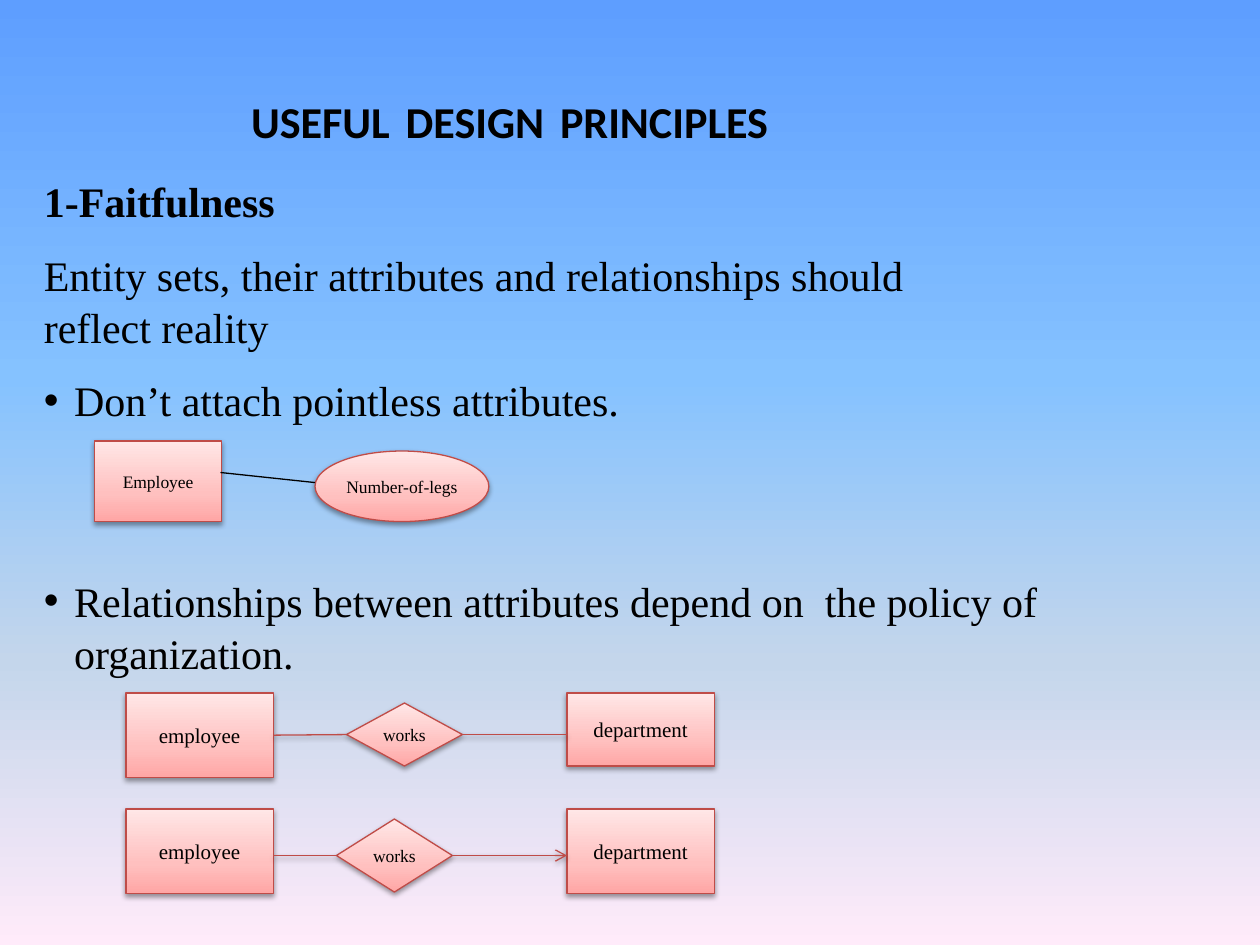
import dataclasses
from typing import Any, Optional

import pptx
import pptx.dml.color
import pptx.enum.shapes
import pptx.enum.text
import pptx.oxml
import pptx.oxml.ns
import pptx.util

Inches = pptx.util.Inches
Kind = pptx.enum.shapes.MSO_SHAPE
Align = pptx.enum.text.PP_ALIGN
Anchor = pptx.enum.text.MSO_ANCHOR
NS = pptx.oxml.ns.nsdecls("a")
TOP, LEFT, LOW, RIGHT = range(4)


@dataclasses.dataclass(frozen=True)
class Theme:
    ink: str = "000000"
    edge: str = "BF4C48"
    sky: tuple = ((0, "5E9EFF"), (40, "85C2FF"), (70, "C4D6EB"), (100, "FFEBFA"))
    rose: tuple = ((0, "FFA6A5"), (35, "FFC0BF"), (100, "FFE7E7"))
    head: str = "Calibri"
    body: str = "Times New Roman"
    title: float = 25.2
    gap: float = 39.6
    text: float = 24
    label: float = 12
    small: float = 10
    line: float = 0.75


THEME = Theme()


@dataclasses.dataclass(frozen=True)
class Node:
    name: str
    text: str
    kind: Any
    box: tuple[float, float, float, float]
    size: float = THEME.label


@dataclasses.dataclass(frozen=True)
class Wire:
    start: tuple[float, float]
    end: tuple[float, float]
    tail: Optional[tuple[str, int]] = None  # node and side joined at the start
    tip: Optional[tuple[str, int]] = None  # node and side joined at the end
    color: str = THEME.edge
    shade: bool = True
    arrow: bool = False


@dataclasses.dataclass(frozen=True)
class Para:
    text: str
    bold: bool = False
    bullet: bool = False


def rgb(code: str) -> Any:
    return pptx.dml.color.RGBColor.from_string(code)


def apply(item: Any, form: dict[str, Any]) -> None:
    for key, value in form.items():
        setattr(item, key, value)


def blend(owner: Any, fill: Any, stops: tuple, angle: int) -> None:
    """Give a shape or background a gradient with any number of stops."""
    fill.gradient()
    old = owner.element.find(".//" + pptx.oxml.ns.qn("a:gradFill"))
    marks = "".join(
        f'<a:gs pos="{at * 1000}"><a:srgbClr val="{code}"/></a:gs>' for at, code in stops
    )
    new = pptx.oxml.parse_xml(
        f'<a:gradFill {NS} rotWithShape="1"><a:gsLst>{marks}</a:gsLst>'
        f'<a:lin ang="{angle * 60000}" scaled="0"/></a:gradFill>'
    )
    old.getparent().replace(old, new)


def finish(item: Any, color: str, shade: bool = True) -> None:
    """Set the outline, then the soft shadow or none."""
    item.line.color.rgb = rgb(color)
    item.line.width = pptx.util.Pt(THEME.line)
    blur, drop = pptx.util.Pt(3.1), pptx.util.Pt(1.6)
    cast = (
        f'<a:outerShdw blurRad="{blur}" dist="{drop}" dir="5400000" rotWithShape="0">'
        '<a:srgbClr val="000000"><a:alpha val="38000"/></a:srgbClr></a:outerShdw>'
    )
    item.element.spPr.append(
        pptx.oxml.parse_xml(f"<a:effectLst {NS}>{cast if shade else ''}</a:effectLst>")
    )


def write(para: Any, text: str, face: str, size: float, bold: bool = False) -> None:
    run = para.add_run()
    run.text = text
    apply(run.font, {"name": face, "size": pptx.util.Pt(size), "bold": bold})
    run.font.color.rgb = rgb(THEME.ink)


def add_title(slide: Any, words: list[str]) -> None:
    frame = slide.shapes.add_textbox(*map(Inches, (0.92, 0.5, 6.25, 0.75))).text_frame
    apply(frame, {"word_wrap": True, "vertical_anchor": Anchor.MIDDLE})
    para = frame.paragraphs[0]
    para.alignment = Align.CENTER
    for spot, word in enumerate(words):
        if spot:
            write(para, " ", THEME.head, THEME.gap, True)
        write(para, word, THEME.head, THEME.title, True)


def add_text(slide: Any, box: tuple, paras: list[Para]) -> None:
    frame = slide.shapes.add_textbox(*map(Inches, box)).text_frame
    frame.word_wrap = True
    for spot, item in enumerate(paras):
        para = frame.add_paragraph() if spot else frame.paragraphs[0]
        form = {"space_before": pptx.util.Pt(THEME.text / 2), "line_spacing": 1.04}
        apply(para, form)
        write(para, item.text, THEME.body, THEME.text, item.bold)
        if item.bullet:
            props = para._p.get_or_add_pPr()
            hang = Inches(0.24)
            props.set("marL", str(hang))
            props.set("indent", str(-hang))
            props.append(pptx.oxml.parse_xml(f'<a:buFont {NS} typeface="Arial"/>'))
            props.append(pptx.oxml.parse_xml(f'<a:buChar {NS} char="•"/>'))


def add_node(slide: Any, node: Node) -> Any:
    shape = slide.shapes.add_shape(node.kind, *map(Inches, node.box))
    blend(shape, shape.fill, THEME.rose, 270)
    finish(shape, THEME.edge)
    frame = shape.text_frame
    apply(frame, {"word_wrap": False, "vertical_anchor": Anchor.MIDDLE})
    frame.paragraphs[0].alignment = Align.CENTER
    write(frame.paragraphs[0], node.text, THEME.body, node.size)
    return shape


def add_wire(slide: Any, wire: Wire, made: dict[str, Any]) -> None:
    line = slide.shapes.add_connector(
        pptx.enum.shapes.MSO_CONNECTOR.STRAIGHT, *map(Inches, wire.start + wire.end)
    )
    for join, link in ((wire.tail, line.begin_connect), (wire.tip, line.end_connect)):
        if join:
            link(made[join[0]], join[1])
    finish(line, wire.color, wire.shade)
    if wire.arrow:
        line.line._get_or_add_ln().append(
            pptx.oxml.parse_xml(f'<a:tailEnd {NS} type="arrow"/>')
        )


NODES = [
    Node("person", "Employee", Kind.RECTANGLE, (0.75, 3.5, 1.01, 0.64), THEME.small),
    Node("legs", "Number-of-legs", Kind.OVAL, (2.5, 3.58, 1.38, 0.56), THEME.small),
    Node("staff1", "employee", Kind.RECTANGLE, (1, 5.5, 1.17, 0.67)),
    Node("dept1", "department", Kind.RECTANGLE, (4.5, 5.5, 1.17, 0.58)),
    Node("works1", "works", Kind.FLOWCHART_DECISION, (2.75, 5.58, 0.92, 0.5), THEME.small),
    Node("staff2", "employee", Kind.RECTANGLE, (1, 6.42, 1.17, 0.67)),
    Node("dept2", "department", Kind.RECTANGLE, (4.5, 6.42, 1.17, 0.67)),
    Node("works2", "works", Kind.FLOWCHART_DECISION, (2.67, 6.5, 0.92, 0.58), THEME.small),
]
WIRES = [
    Wire((1.75, 3.75), (2.5, 3.83), color=THEME.ink, shade=False),
    Wire((2.17, 5.83), (2.75, 5.83), ("staff1", RIGHT), ("works1", LEFT)),
    Wire((3.67, 5.83), (4.5, 5.83), ("works1", RIGHT)),
    Wire((2.17, 6.79), (2.67, 6.79), tip=("works2", LEFT)),
    Wire((3.58, 6.79), (4.5, 6.79), ("works2", RIGHT), arrow=True),
]


def main() -> None:
    deck = pptx.Presentation()
    apply(deck, {"slide_width": Inches(10), "slide_height": Inches(7.5)})
    slide = deck.slides.add_slide(deck.slide_layouts[6])
    blend(slide, slide.background.fill, THEME.sky, 90)

    # Title and text
    add_title(slide, ["USEFUL", "DESIGN", "PRINCIPLES"])
    add_text(slide, (0.25, 1.33, 7.33, 2.7), [
        Para("1-Faitfulness", bold=True),
        Para("Entity sets, their attributes and relationships should reflect reality"),
        Para("Don’t attach pointless attributes.", bullet=True),
    ])
    add_text(slide, (0.25, 4.5, 9.58, 0.91), [
        Para("Relationships between attributes depend on  the policy of organization.",
             bullet=True),
    ])

    # Diagrams
    made = {node.name: add_node(slide, node) for node in NODES}
    for wire in WIRES:
        add_wire(slide, wire, made)
    deck.save("out.pptx")


if __name__ == "__main__":
    main()
